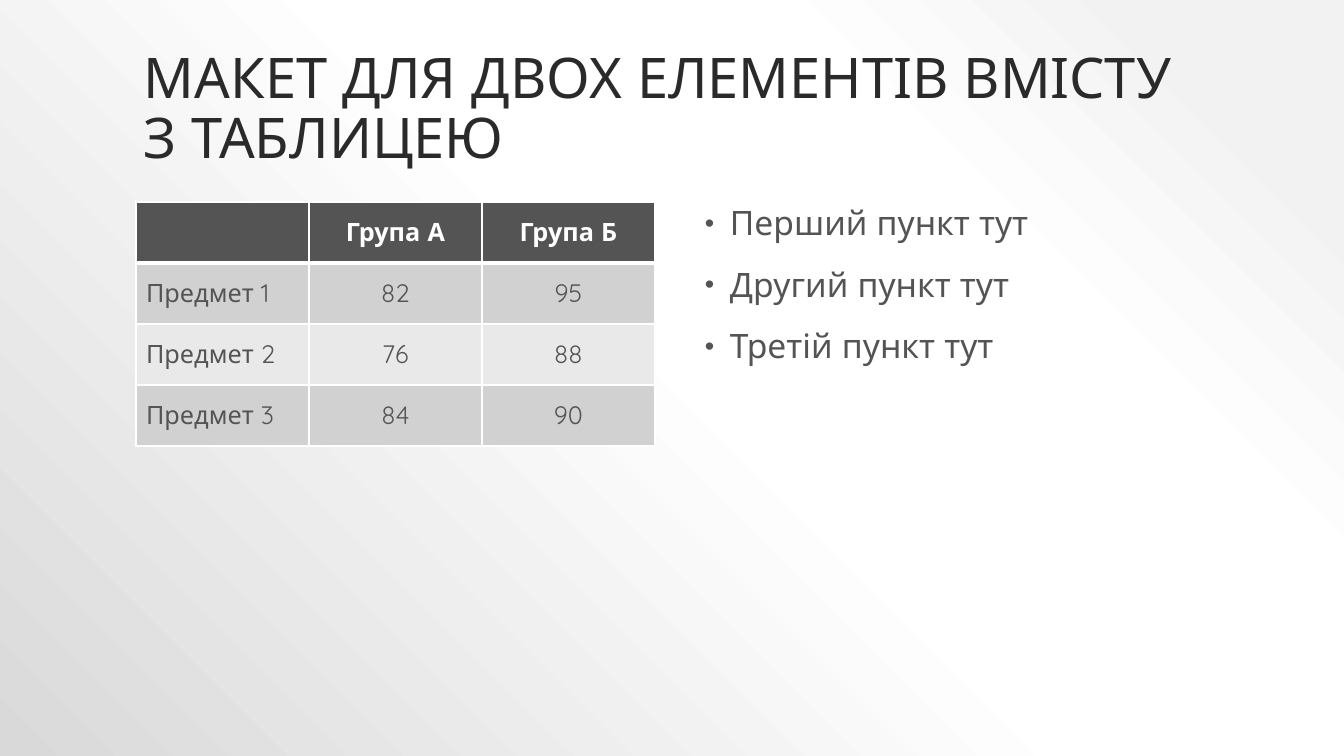
from dataclasses import dataclass

from lxml import etree
from pptx import Presentation
from pptx import util as u
from pptx.dml.color import RGBColor
from pptx.enum import text
from pptx.oxml import ns

SCALE = 12192000 / 1344
FONT = "Quicksand"
DARK, GRAY, WHITE = "2A2A2A", "545454", "FFFFFF"
STRIPES = ("E9E9E9", "D1D1D1")
BACKGROUND_STOPS = ((10, "F2F2F2"), (28, WHITE), (48, WHITE), (100, "D9D9D9"))
COLUMN_WIDTH, ROW_HEIGHT = 173, 61
SCORES = (
    ("", "Група А", "Група Б"),
    ("Предмет 1", "82", "95"),
    ("Предмет 2", "76", "88"),
    ("Предмет 3", "84", "90"),
)


@dataclass(frozen=True)
class TextBlock:
    left: int
    top: int
    width: int
    height: int
    lines: tuple[str, ...]
    size: int
    color: str
    anchor: text.MSO_ANCHOR
    bulleted: bool = False


BLOCKS = (
    TextBlock(134, 30, 1075, 146, ("МАКЕТ ДЛЯ ДВОХ ЕЛЕМЕНТІВ ВМІСТУ З ТАБЛИЦЕЮ",),
              40, DARK, text.MSO_ANCHOR.BOTTOM),
    TextBlock(690, 202, 519, 479,
              ("Перший пункт тут", "Другий пункт тут", "Третій пункт тут"),
              24, GRAY, text.MSO_ANCHOR.TOP, True),
)


def px(length: int) -> u.Emu:
    return u.Emu(round(length * SCALE))


def rgb(color: str) -> RGBColor:
    return RGBColor.from_string(color)


def add_child(parent, tag: str, **attributes):
    values = {name: str(value) for name, value in attributes.items()}
    return etree.SubElement(parent, ns.qn(tag), values)


def add_span(para, words: str, size: int, color: str, bold: bool = False) -> None:
    span = para.add_run()
    span.text = words
    span.font.name = FONT
    span.font.size = u.Pt(size)
    span.font.bold = bold
    span.font.color.rgb = rgb(color)


def paint_background(page) -> None:
    page.background.fill.gradient()
    gradient = page.element.find(".//" + ns.qn("a:gradFill"))
    for child in list(gradient):
        gradient.remove(child)
    stops = add_child(gradient, "a:gsLst")
    for position, color in BACKGROUND_STOPS:
        stop = add_child(stops, "a:gs", pos=position * 1000)
        add_child(stop, "a:srgbClr", val=color)
    circle = add_child(gradient, "a:path", path="circle")
    add_child(circle, "a:fillToRect", l=100000, t=0, r=0, b=100000)


def add_bullet(para) -> None:
    properties = para._p.get_or_add_pPr()
    properties.set("marL", str(px(30)))
    properties.set("indent", str(-px(25)))
    bullet_color = add_child(properties, "a:buClr")
    add_child(bullet_color, "a:srgbClr", val=GRAY)
    add_child(properties, "a:buSzPct", val=80000)
    add_child(properties, "a:buFont", typeface="Arial")
    add_child(properties, "a:buChar", char="•")


def add_block(page, block: TextBlock) -> None:
    box = page.shapes.add_textbox(
        px(block.left), px(block.top), px(block.width), px(block.height))
    frame = box.text_frame
    frame.word_wrap = True
    frame.vertical_anchor = block.anchor
    for index, line in enumerate(block.lines):
        para = frame.add_paragraph() if index else frame.paragraphs[0]
        para.line_spacing = 0.9
        if block.bulleted:
            para.space_before = u.Pt(18)
            add_bullet(para)
        add_span(para, line, block.size, block.color)


def add_borders(cell, row: int) -> None:
    properties = cell._tc.get_or_add_tcPr()
    for side in ("L", "R", "T", "B"):
        heavy = (row, side) in ((0, "B"), (1, "T"))
        line = add_child(properties, f"a:ln{side}", w=u.Pt(3 if heavy else 1))
        fill = add_child(line, "a:solidFill")
        add_child(fill, "a:srgbClr", val=WHITE)


def add_scores(page) -> None:
    row_count, column_count = len(SCORES), len(SCORES[0])
    table = page.shapes.add_table(
        row_count, column_count, px(136), px(202),
        px(COLUMN_WIDTH * column_count), px(ROW_HEIGHT * row_count)).table
    for row, values in enumerate(SCORES):
        header = row == 0
        for column, words in enumerate(values):
            cell = table.cell(row, column)
            add_borders(cell, row)
            cell.fill.solid()
            cell.fill.fore_color.rgb = rgb(GRAY if header else STRIPES[row % 2])
            cell.vertical_anchor = text.MSO_ANCHOR.MIDDLE
            para = cell.text_frame.paragraphs[0]
            if column:
                para.alignment = text.PP_ALIGN.CENTER
            if words:
                add_span(para, words, 18, WHITE if header else GRAY, header)


def main() -> None:
    deck = Presentation()
    deck.slide_width, deck.slide_height = px(1344), px(756)
    page = deck.slides.add_slide(deck.slide_layouts[6])
    paint_background(page)
    for block in BLOCKS:
        add_block(page, block)
    add_scores(page)
    deck.save("out.pptx")


if __name__ == "__main__":
    main()
